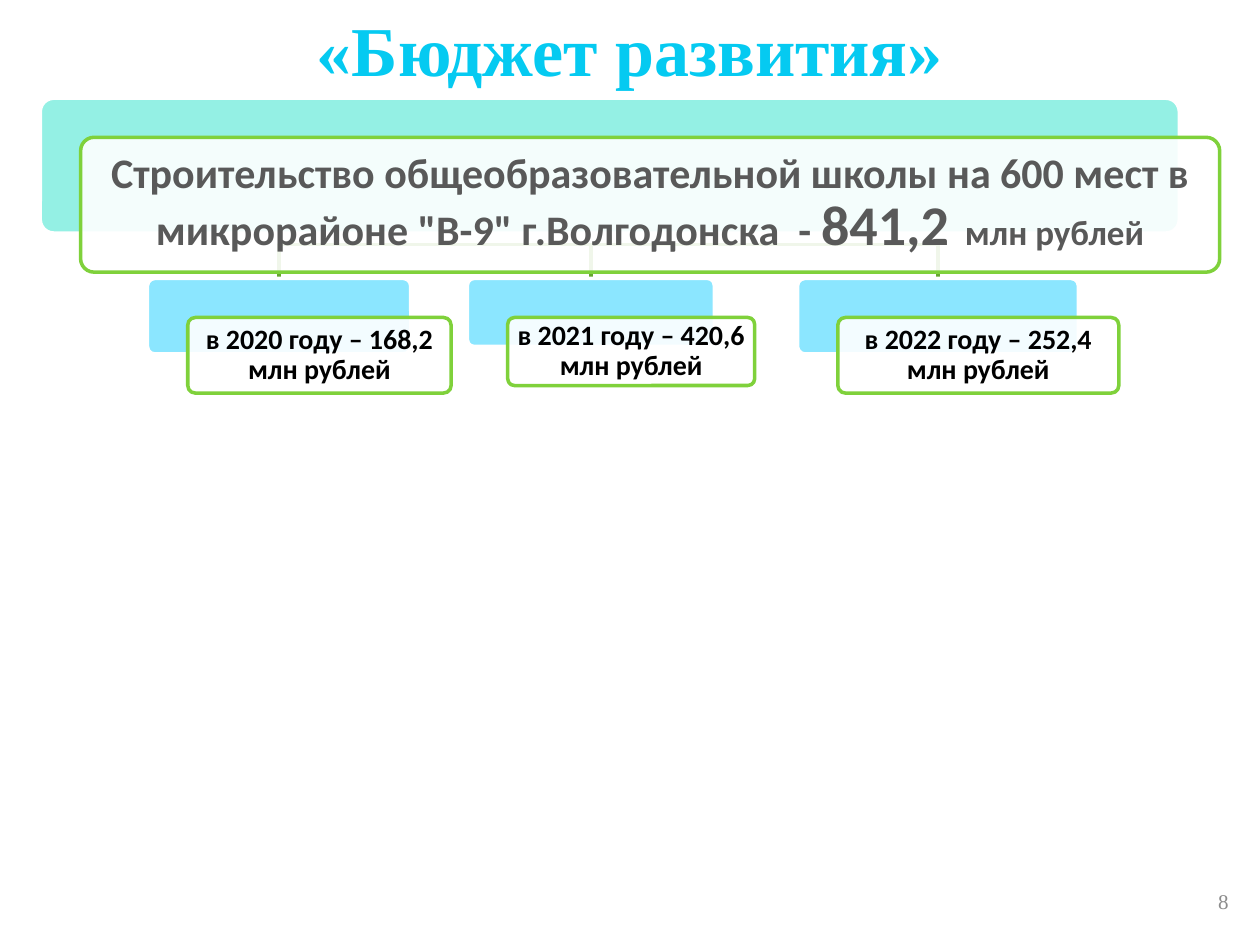
from dataclasses import dataclass

import pptx
import pptx.dml.color
import pptx.enum.shapes
import pptx.enum.text
import pptx.oxml
import pptx.oxml.ns
import pptx.util
from pptx.util import Inches

SHAPE = pptx.enum.shapes.MSO_SHAPE
ALIGN = pptx.enum.text.PP_ALIGN
ANCHOR = pptx.enum.text.MSO_ANCHOR


@dataclass(frozen=True)
class Theme:
    heading_font: str = "Times New Roman"
    body_font: str = "Calibri"
    white: str = "FFFFFF"
    title: str = "05CAF1"
    project_back: str = "94F0E4"
    year_back: str = "8BE6FF"
    card_line: str = "7FD13B"
    branch: str = "66A72F"
    project_text: str = "595959"
    year_text: str = "000000"
    page_text: str = "8C8C8C"
    title_size: int = 40
    project_size: int = 24
    amount_size: int = 32
    unit_size: int = 20
    year_size: int = 16
    page_size: int = 12
    line_width: int = 2


THEME = Theme()
CARD_SHIFT = (0.32, 0.31)
CORNER = 0.1
PROJECT_BOX = (0.32, 0.78, 9.04, 1.07)
YEAR_TOP = 2.21
BRANCH_TOP, BRANCH_BEND = 1.86, 1.94
PROJECT_RUNS = [
    ('Строительство общеобразовательной школы на 600 мест в микрорайоне "В-9" г.Волгодонска  - ',
     THEME.project_size),
    ("841,2", THEME.amount_size),
    ("  млн рублей", THEME.unit_size),
]
# left, width, height, wording
YEARS = [
    (1.17, 2.09, 0.6, "в 2020 году – 168,2 млн рублей"),
    (3.71, 1.96, 0.54, "в 2021 году – 420,6 млн рублей"),
    (6.33, 2.23, 0.6, "в 2022 году – 252,4 млн рублей"),
]


def rgb(value):
    return pptx.dml.color.RGBColor.from_string(value)


def set_line(shape, color):
    shape.line.color.rgb = rgb(color)
    shape.line.width = pptx.util.Pt(THEME.line_width)


def set_text(shape, runs, font, color, bold=True, align=ALIGN.CENTER, anchor=ANCHOR.MIDDLE):
    """Fill one paragraph with (wording, size) runs."""
    frame = shape.text_frame
    frame.word_wrap = True
    frame.vertical_anchor = anchor
    paragraph = frame.paragraphs[0]
    paragraph.alignment = align
    for wording, size in runs:
        run = paragraph.add_run()
        run.text = wording
        run.font.name = font
        run.font.size = pptx.util.Pt(size)
        run.font.bold = bold
        run.font.color.rgb = rgb(color)


def add_box(slide, kind, box, fill):
    shape = slide.shapes.add_shape(kind, *map(Inches, box))
    shape.shadow.inherit = False
    shape.fill.solid()
    shape.fill.fore_color.rgb = rgb(fill)
    return shape


def add_rounded(slide, box, fill, line):
    shape = add_box(slide, SHAPE.ROUNDED_RECTANGLE, box, fill)
    shape.adjustments[0] = CORNER
    set_line(shape, line)
    return shape


def set_opacity(shape, percent):
    color = shape.fill._xPr.find(".//" + pptx.oxml.ns.qn("a:srgbClr"))
    alpha = pptx.oxml.parse_xml(f'<a:alpha {pptx.oxml.ns.nsdecls("a")} val="{percent * 1000}"/>')
    color.append(alpha)


def add_card(slide, box, back, runs, color, inset):
    """Draw a coloured back plate and the shifted translucent card with its text."""
    left, top, width, height = box
    add_rounded(slide, box, back, THEME.white)
    front = (left + CARD_SHIFT[0], top + CARD_SHIFT[1], width, height)
    card = add_rounded(slide, front, THEME.white, THEME.card_line)
    set_opacity(card, 90)
    set_text(card, runs, THEME.body_font, color)
    frame = card.text_frame
    frame.margin_left = frame.margin_right = Inches(inset)
    frame.margin_top = frame.margin_bottom = Inches(inset)
    frame.paragraphs[0].line_spacing = 0.9


def add_branch(slide, start, end):
    """Draw the bent line from the project down to a year."""
    builder = slide.shapes.build_freeform(Inches(start), Inches(BRANCH_TOP))
    bends = [(start, BRANCH_BEND), (end, BRANCH_BEND), (end, YEAR_TOP)]
    builder.add_line_segments([(Inches(x), Inches(y)) for x, y in bends], close=False)
    branch = builder.convert_to_shape()
    branch.shadow.inherit = False
    branch.fill.background()
    set_line(branch, THEME.branch)


def add_title(slide):
    title = add_box(slide, SHAPE.RECTANGLE, (0, 0, 10, 0.77), THEME.white)
    title.line.fill.background()
    set_text(title, [("«Бюджет развития»", THEME.title_size)],
             THEME.heading_font, THEME.title, anchor=ANCHOR.TOP)


def add_page_number(slide):
    number = slide.shapes.add_textbox(*map(Inches, (8.83, 6.95, 1.02, 0.4)))
    set_text(number, [("8", THEME.page_size)], THEME.heading_font, THEME.page_text,
             bold=False, align=ALIGN.RIGHT)


def main():
    deck = pptx.Presentation()
    deck.slide_width, deck.slide_height = Inches(10), Inches(7.5)
    slide = deck.slides.add_slide(deck.slide_layouts[6])

    add_title(slide)
    project_center = PROJECT_BOX[0] + PROJECT_BOX[2] / 2
    for left, width, _, _ in reversed(YEARS):
        add_branch(slide, project_center, left + width / 2)
    add_card(slide, PROJECT_BOX, THEME.project_back, PROJECT_RUNS, THEME.project_text, 0.07)
    for left, width, height, wording in YEARS:
        add_card(slide, (left, YEAR_TOP, width, height), THEME.year_back,
                 [(wording, THEME.year_size)], THEME.year_text, 0.05)
    add_page_number(slide)

    deck.save("out.pptx")


if __name__ == "__main__":
    main()
